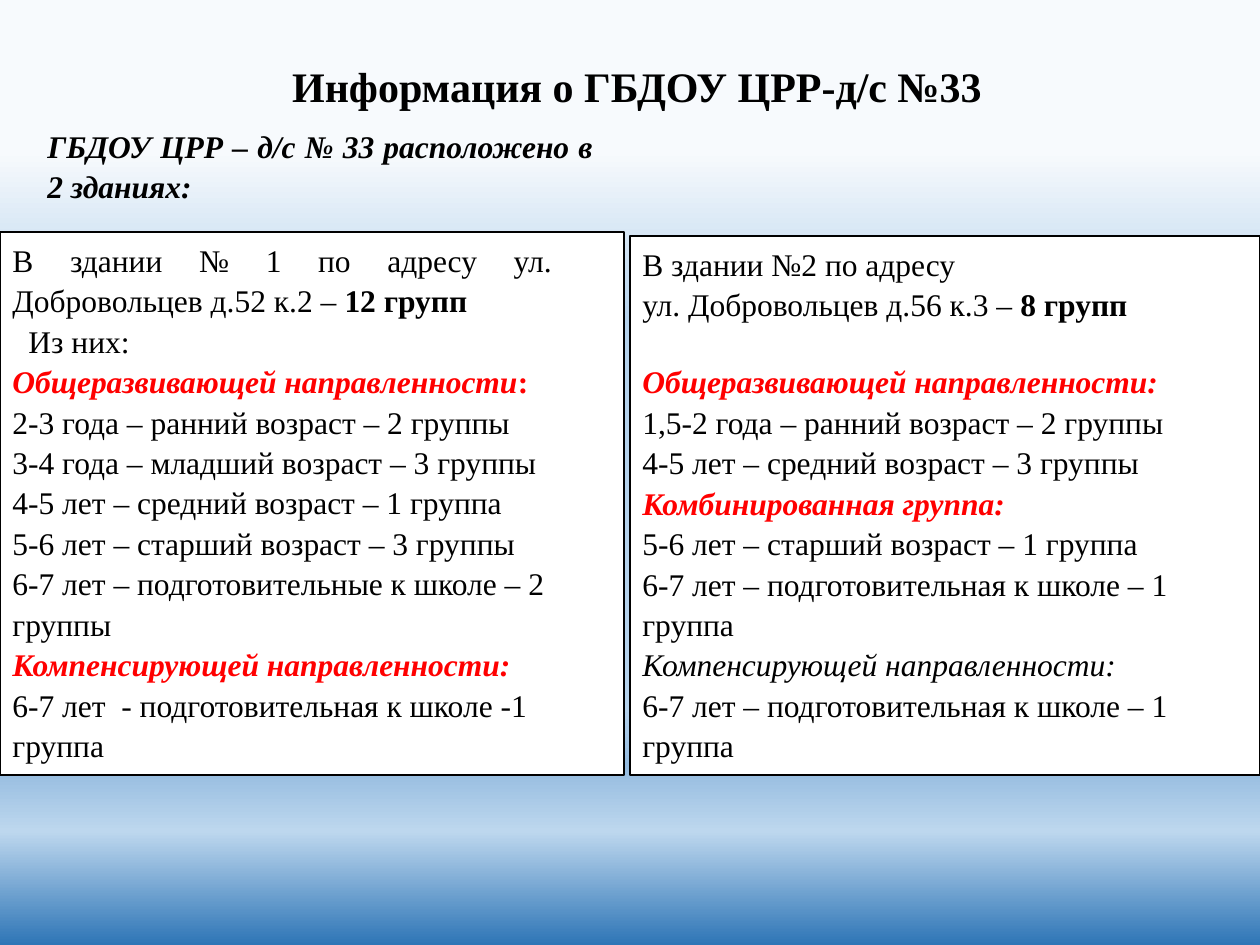
from dataclasses import dataclass

from lxml import etree
from pptx import Presentation
from pptx.dml.color import RGBColor
from pptx.enum import shapes, text
from pptx.oxml import ns
from pptx.util import Emu, Pt


@dataclass(frozen=True)
class Theme:
    font: str = "Times New Roman"
    black: str = "000000"
    red: str = "FF0000"
    white: str = "FFFFFF"
    title_size: int = 24
    body_size: int = 18
    line_spacing: float = 1.07
    sky: tuple = ((16, "F7FAFD"), (34, "B5D2EC"), (75, "B5D2EC"),
                  (81, "94BBDF"), (88, "BDD7EE"), (100, "2E75B6"))


theme = Theme()


def px(length):
    return Emu(round(length * 914400 / 126))


def write(para, words, size=theme.body_size, color=theme.black, bold=False, italic=False):
    span = para.add_run()
    span.text = words
    span.font.name = theme.font
    span.font.size = Pt(size)
    span.font.bold = bold
    span.font.italic = italic
    span.font.color.rgb = RGBColor.from_string(color)


deck = Presentation()
deck.slide_width, deck.slide_height = px(1260), px(945)
page = deck.slides.add_slide(deck.slide_layouts[5])

sky = page.background.fill
sky.gradient()
sky.gradient_angle = 270
stops = page.element.find(".//" + ns.qn("a:gsLst"))
for stop in list(stops):
    stops.remove(stop)
for percent, color in theme.sky:
    stop = etree.SubElement(stops, ns.qn("a:gs"), pos=str(percent * 1000))
    etree.SubElement(stop, ns.qn("a:srgbClr"), val=color)

title = page.shapes.title
title.left, title.top, title.width, title.height = px(276), px(54), px(722), px(63)
title.text_frame.word_wrap = False
title.text_frame.vertical_anchor = text.MSO_ANCHOR.TOP
title.text_frame.auto_size = text.MSO_AUTO_SIZE.SHAPE_TO_FIT_TEXT
write(title.text_frame.paragraphs[0], "Информация о ГБДОУ ЦРР-д/с №33",
      size=theme.title_size, bold=True)

bold = dict(bold=True)
slanted = dict(italic=True)
strong = dict(bold=True, italic=True)
heading = dict(color=theme.red, **strong)
plain = {}

intro = [[("ГБДОУ ЦРР – д/с № 33 расположено в 2 зданиях:", strong)]]
first_building = [
    [("В здании № 1 по адресу ул. Добровольцев д.52 к.2 – ", plain), ("12 групп", bold)],
    [("Из них:", plain)],
    [("Общеразвивающей направленности", heading), (":", dict(color=theme.red, bold=True))],
    [("2-3 года – ранний возраст – 2 группы", plain)],
    [("3-4 года – младший возраст – 3 группы", plain)],
    [("4-5 лет – средний возраст – 1 группа", plain)],
    [("5-6 лет – старший возраст – 3 группы", plain)],
    [("6-7 лет – подготовительные к школе – 2 группы", plain)],
    [("Компенсирующей направленности:", heading)],
    [("6-7 лет  - подготовительная к школе -1 группа", plain)],
]
second_building = [
    [("В здании №2 по адресу", plain)],
    [("ул. Добровольцев д.56 к.3 – ", plain), ("8 групп", bold)],
    [("Общеразвивающей направленности:", heading)],
    [("1,5-2 года – ранний возраст – 2 группы", plain)],
    [("4-5 лет – средний возраст – 3 группы", plain)],
    [("Комбинированная группа:", heading)],
    [("5-6 лет – старший возраст – 1 группа", plain)],
    [("6-7 лет – подготовительная к школе – 1 группа", plain)],
    [("Компенсирующей направленности:", slanted)],
    [("6-7 лет – подготовительная к школе – 1 группа", plain)],
]

blocks = [
    (first_building, (0, 232, 624, 543), True, 7),
    (intro, (35, 118, 630, 95), False, 1),
    (second_building, (630, 236, 630, 539), True, 0),
]
for lines, place, framed, justified in blocks:
    left, top, width, height = map(px, place)
    if framed:
        box = page.shapes.add_shape(shapes.MSO_SHAPE.RECTANGLE, left, top, width, height)
        box.shadow.inherit = False
        box.fill.solid()
        box.fill.fore_color.rgb = RGBColor.from_string(theme.white)
        box.line.color.rgb = RGBColor.from_string(theme.black)
        box.line.width = Pt(1)
    else:
        box = page.shapes.add_textbox(left, top, width, height)
    frame = box.text_frame
    frame.word_wrap = True
    frame.auto_size = text.MSO_AUTO_SIZE.SHAPE_TO_FIT_TEXT
    frame.vertical_anchor = text.MSO_ANCHOR.TOP
    frame.margin_right = px(72)
    for row, spans in enumerate(lines):
        para = frame.add_paragraph() if row else frame.paragraphs[0]
        para.alignment = text.PP_ALIGN.JUSTIFY if row < justified else text.PP_ALIGN.LEFT
        para.line_spacing = theme.line_spacing
        for words, style in spans:
            write(para, words, **style)
    if lines is first_building:
        frame.paragraphs[1]._p.get_or_add_pPr().set("indent", str(px(16)))
    if lines is second_building:
        frame.paragraphs[2].space_before = Pt(21)

deck.save("out.pptx")
